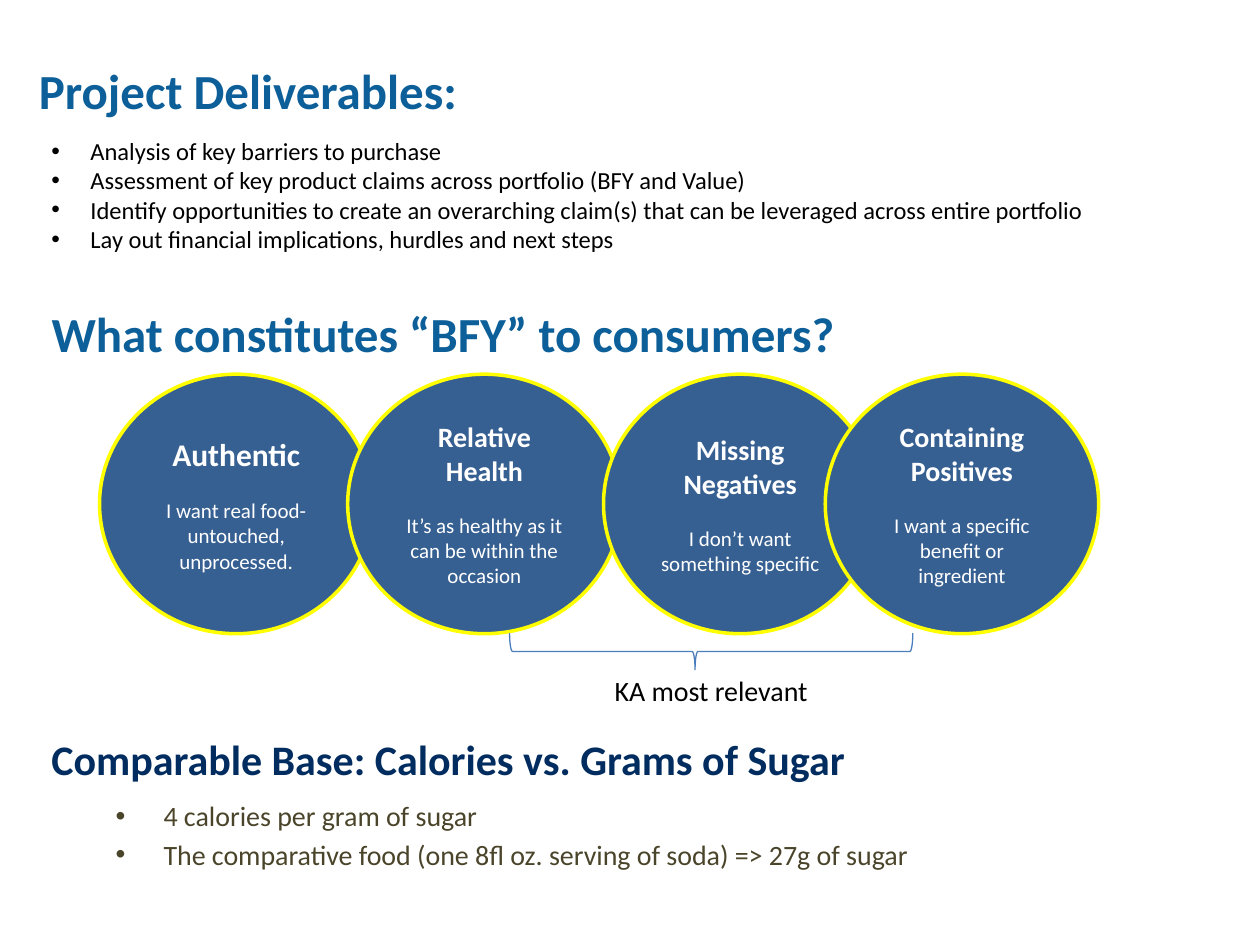
import lxml.etree
import pptx
import pptx.dml.color
import pptx.enum.shapes
import pptx.enum.text
import pptx.oxml.ns
import pptx.util

SHAPES = pptx.enum.shapes.MSO_SHAPE
ALIGN = pptx.enum.text.PP_ALIGN
ANCHOR = pptx.enum.text.MSO_ANCHOR


def color(value):
    return pptx.dml.color.RGBColor.from_string(value)


class SlideBuilder:
    """Build one slide on a grid of 100 columns by 75 rows."""

    HEADING = {"size": 28, "color": "0C5F99", "bold": True}
    SUBHEADING = {"size": 24, "color": "002C5F", "bold": True}
    BODY = {"size": 14, "color": "000000"}
    LABEL = {"size": 16, "color": "000000"}
    NOTE = {"size": 16, "color": "4A452A"}
    CIRCLE_TEXT = {"size": 12, "color": "FFFFFF"}

    def __init__(self, presentation):
        self.column = presentation.slide_width / 100
        self.row = presentation.slide_height / 75
        self.slide = presentation.slides.add_slide(presentation.slide_layouts[5])

    def place(self, left, top, width, height):
        return (round(left * self.column), round(top * self.row),
                round(width * self.column), round(height * self.row))

    def add_words(self, paragraph, text, style, **layout):
        run = paragraph.add_run()
        run.text = text
        run.font.color.rgb = color(style["color"])
        values = {"name": "Calibri", "size": pptx.util.Pt(style["size"]),
                  "bold": style.get("bold", False)}
        for name, value in values.items():
            setattr(run.font, name, value)
        for name, value in layout.items():
            setattr(paragraph, name, value)

    def frame(self, shape, anchor=ANCHOR.TOP):
        frame = shape.text_frame
        values = {"word_wrap": True, "vertical_anchor": anchor,
                  "auto_size": pptx.enum.text.MSO_AUTO_SIZE.NONE}
        for name, value in values.items():
            setattr(frame, name, value)
        return frame

    def title(self, text, *box):
        shape = self.slide.shapes.title
        for name, value in zip(("left", "top", "width", "height"), self.place(*box)):
            setattr(shape, name, value)
        paragraph = self.frame(shape, ANCHOR.MIDDLE).paragraphs[0]
        self.add_words(paragraph, text, self.HEADING, alignment=ALIGN.LEFT)

    def text(self, text, style, *box, anchor=ANCHOR.TOP, alignment=ALIGN.LEFT):
        shape = self.slide.shapes.add_textbox(*self.place(*box))
        paragraph = self.frame(shape, anchor).paragraphs[0]
        self.add_words(paragraph, text, style, alignment=alignment)

    def bullets(self, items, style, *box, indent, gap=0):
        frame = self.frame(self.slide.shapes.add_textbox(*self.place(*box)))
        for index, item in enumerate(items):
            paragraph = frame.add_paragraph() if index else frame.paragraphs[0]
            properties = paragraph._p.get_or_add_pPr()
            offset = round(indent * self.column)
            properties.set("marL", str(offset))
            properties.set("indent", str(-offset))
            for tag, name, value in (("a:buFont", "typeface", "Arial"),
                                     ("a:buChar", "char", "•")):
                element = lxml.etree.SubElement(properties, pptx.oxml.ns.qn(tag))
                element.set(name, value)
            self.add_words(paragraph, item, style,
                           space_before=pptx.util.Pt(gap if index else 0))

    def outline(self, shape, line_color, width):
        shape.shadow.inherit = False
        shape.line.color.rgb = color(line_color)
        shape.line.width = pptx.util.Pt(width)

    def circle(self, heading, heading_size, detail, *box):
        shape = self.slide.shapes.add_shape(SHAPES.OVAL, *self.place(*box))
        self.outline(shape, "FFFF00", 2)
        shape.fill.solid()
        shape.fill.fore_color.rgb = color("376092")
        frame = self.frame(shape, ANCHOR.MIDDLE)
        heading_style = {**self.CIRCLE_TEXT, "size": heading_size, "bold": True}
        self.add_words(frame.paragraphs[0], heading, heading_style,
                       alignment=ALIGN.CENTER)
        self.add_words(frame.add_paragraph(), detail, self.CIRCLE_TEXT,
                       alignment=ALIGN.CENTER, space_before=pptx.util.Pt(14.5))

    def brace(self, *box):
        shape = self.slide.shapes.add_shape(SHAPES.LEFT_BRACE, *self.place(*box))
        self.outline(shape, "4B7EBC", 0.75)
        shape.fill.background()
        shape.rotation = 270
        for index, value in enumerate((0.08, 0.46)):
            shape.adjustments[index] = value


def main():
    presentation = pptx.Presentation()
    presentation.slide_width = pptx.util.Inches(10)
    presentation.slide_height = pptx.util.Inches(7.5)
    builder = SlideBuilder(presentation)

    builder.title("What constitutes “BFY” to consumers?", 3.1, 23.2, 87.4, 6.4)
    claims = (
        (7.9, "Authentic", 18, "I want real food- untouched, unprocessed."),
        (27.6, "Relative Health", 16, "It’s as healthy as it can be within the occasion"),
        (47.9, "Missing Negatives", 16, "I don’t want something specific"),
        (65.5, "Containing Positives", 16, "I want a specific benefit or ingredient"),
    )
    for left, heading, size, detail in claims:
        builder.circle(heading, size, detail, left, 29.7, 21.7, 20.6)
    builder.brace(55, 35.7, 2.9, 32)
    builder.text("KA most relevant", builder.LABEL, 41.8, 53, 29.3, 3.7,
                 alignment=ALIGN.CENTER)

    builder.text("Comparable Base: Calories vs. Grams of Sugar",
                 builder.SUBHEADING, 3.1, 57.7, 87.4, 4)
    builder.bullets(("4 calories per gram of sugar",
                     "The comparative food (one 8fl oz. serving of soda) => 27g of sugar"),
                    builder.NOTE, 8.2, 62.9, 66.4, 6, indent=3.8, gap=3)

    builder.text("Project Deliverables:", builder.HEADING, 2.1, 3.9, 87.4, 6.4,
                 anchor=ANCHOR.MIDDLE)
    builder.bullets(("Analysis of key barriers to purchase",
                     "Assessment of key product claims across portfolio (BFY and Value)",
                     "Identify opportunities to create an overarching claim(s) that can be "
                     "leveraged across entire portfolio",
                     "Lay out financial implications, hurdles and next steps"),
                    builder.BODY, 3.1, 10.3, 85.3, 10.4, indent=3.1)
    presentation.save("out.pptx")


if __name__ == "__main__":
    main()
